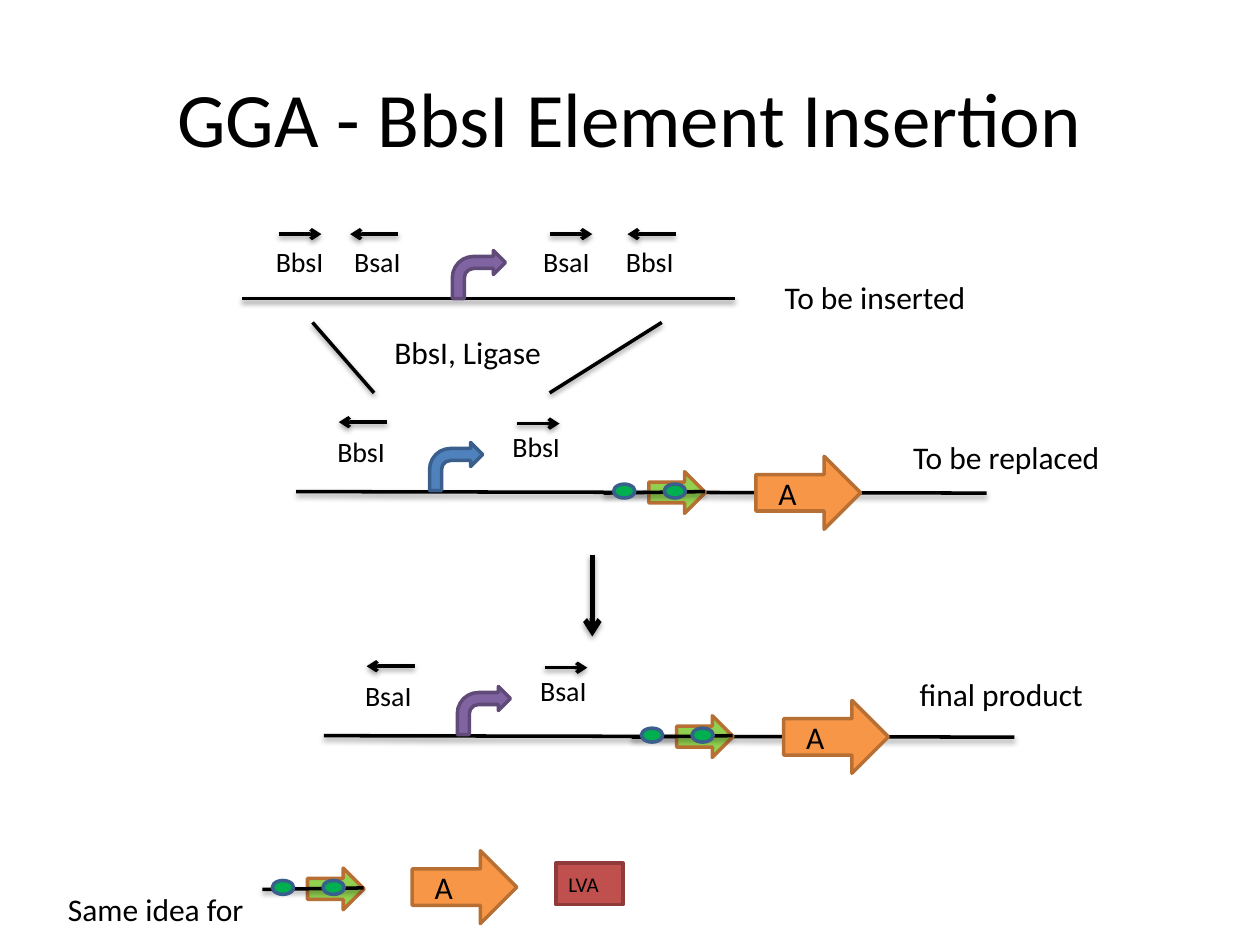
from lxml import etree
from pptx import Presentation
from pptx.dml.color import RGBColor
from pptx.enum.shapes import MSO_CONNECTOR, MSO_SHAPE
from pptx.enum.text import MSO_ANCHOR, PP_ALIGN
from pptx.oxml.ns import qn
from pptx.util import Cm, Pt

STRAIGHT = MSO_CONNECTOR.STRAIGHT
RIGHT_ARROW, BENT_ARROW = MSO_SHAPE.RIGHT_ARROW, MSO_SHAPE.BENT_ARROW
OVAL, RECTANGLE = MSO_SHAPE.OVAL, MSO_SHAPE.RECTANGLE
LEFT, CENTER = PP_ALIGN.LEFT, PP_ALIGN.CENTER
TOP, MIDDLE = MSO_ANCHOR.TOP, MSO_ANCHOR.MIDDLE

BLACK = "000000"
ORANGE, ORANGE_EDGE = "F79646", "B76F34"
PURPLE, PURPLE_EDGE = "8064A2", "5F4A78"
BLUE, BLUE_EDGE = "4F81BD", "3A5F8C"
RED, RED_EDGE = "C0504D", "8E3B39"
LIME, GREEN = "92D050", "00B050"


def colour(hex_string):
    """Turn a hex string into a colour."""
    return RGBColor.from_string(hex_string)


def write(frame, text, size=18, align=LEFT, anchor=TOP, ink=BLACK):
    """Put formatted text into a text frame."""
    frame.word_wrap = True
    frame.vertical_anchor = anchor
    paragraph = frame.paragraphs[0]
    paragraph.alignment = align
    run = paragraph.add_run()
    run.text = text
    run.font.name = "Calibri"
    run.font.size = Pt(size)
    run.font.color.rgb = colour(ink)


def add_label(slide, text, x, y, width, height=1.02, **style):
    """Place a text box."""
    label = slide.shapes.add_textbox(Cm(x), Cm(y), Cm(width), Cm(height))
    write(label.text_frame, text, **style)


def add_part(shapes, kind, x, y, width, height, fill, edge):
    """Place a filled and outlined preset shape."""
    part = shapes.add_shape(kind, Cm(x), Cm(y), Cm(width), Cm(height))
    part.shadow.inherit = False
    part.fill.solid()
    part.fill.fore_color.rgb = colour(fill)
    part.line.color.rgb = colour(edge)
    part.line.width = Pt(2)
    return part


def add_line(shapes, x1, y1, x2, y2, weight=2, arrow=False):
    """Draw a black line with a soft shadow and an optional arrowhead."""
    line = shapes.add_connector(STRAIGHT, Cm(x1), Cm(y1), Cm(x2), Cm(y2))
    line.line.color.rgb = colour(BLACK)
    line.line.width = Pt(weight)
    properties = line._element.spPr
    if arrow:
        etree.SubElement(properties.find(qn("a:ln")), qn("a:tailEnd"), type="arrow")
    effects = etree.SubElement(properties, qn("a:effectLst"))
    shadow = etree.SubElement(
        effects, qn("a:outerShdw"), blurRad=str(Pt(3.1)), dist=str(Pt(1.6)),
        dir="5400000", rotWithShape="0")
    shade = etree.SubElement(shadow, qn("a:srgbClr"), val=BLACK)
    etree.SubElement(shade, qn("a:alpha"), val="38000")


def add_site(slide, enzyme, x, y, label_x, label_y, forward):
    """Draw a restriction site: a direction arrow and the enzyme name."""
    reach = 0.86 if forward else -0.97
    add_line(slide.shapes, x, y, x + reach, y, arrow=True)
    add_label(slide, enzyme, label_x, label_y, 1.96, 1.7, size=16)


def add_promoter(slide, x, y, fill, edge):
    """Draw a promoter standing on the backbone."""
    add_part(slide.shapes, BENT_ARROW, x, y, 1.07, 0.97, fill, edge)


def add_gene(slide, x, y):
    """Draw the coding sequence A."""
    add_part(slide.shapes, RIGHT_ARROW, x, y, 2.11, 1.47, ORANGE, ORANGE_EDGE)
    add_label(slide, "A", x + 0.2, y + 0.23, 0.84)


def add_cassette(slide, x, y):
    """Draw the grouped arrow with its two recombination sites."""
    shapes = slide.shapes.add_group_shape().shapes
    add_part(shapes, RIGHT_ARROW, x + 0.91, y - 0.43, 1.14, 0.84, LIME, ORANGE_EDGE)
    add_line(shapes, x, y, x + 2.04, y - 0.03)
    for offset in (1.22, 0.2):
        add_part(shapes, OVAL, x + offset, y - 0.18, 0.43, 0.28, GREEN, BLUE_EDGE)


def add_insert(slide, x, y):
    """Draw the fragment to be inserted, with its backbone starting at x, y."""
    add_line(slide.shapes, x, y, x + 9.93, y)
    add_promoter(slide, x + 4.24, y - 0.97, PURPLE, PURPLE_EDGE)
    sites = (("BbsI", 0.74, 0.43, True), ("BsaI", 3.15, 2.01, False),
             ("BsaI", 6.2, 5.82, True), ("BbsI", 8.74, 7.49, False))
    for enzyme, start, label, forward in sites:
        add_site(slide, enzyme, x + start, y - 1.3, x + label, y - 1.22, forward)
    add_label(slide, "To be inserted", x + 10.69, y - 0.53, 5.03)


def add_construct(slide, x, y, enzyme, fill, edge):
    """Draw a whole construct, with its backbone starting at x, y."""
    add_line(slide.shapes, x, y, x + 13.92, y + 0.03)
    add_gene(slide, x + 9.27, y - 0.71)
    add_promoter(slide, x + 2.69, y - 0.99, fill, edge)
    add_cassette(slide, x + 6.2, y + 0.03)
    add_site(slide, enzyme, x + 1.83, y - 1.4, x + 0.58, y - 1.27, False)
    add_site(slide, enzyme, x + 4.45, y - 1.37, x + 4.11, y - 1.37, True)


def add_reaction(slide, x, y):
    """Draw the ligation step between insert and target."""
    add_line(slide.shapes, x, y, x + 1.24, y + 1.42)
    add_line(slide.shapes, x + 7.04, y, x + 4.78, y + 1.42)
    add_label(slide, "BbsI, Ligase", x + 1.4, y + 0.08, 3.58)


def add_other_elements(slide, x, y):
    """Draw the row of other exchangeable elements."""
    add_cassette(slide, x + 4.17, y + 0.13)
    add_gene(slide, x + 7.19, y - 0.65)
    tag = add_part(slide.shapes, RECTANGLE, x + 10.09, y - 0.4, 1.35, 0.84, RED, RED_EDGE)
    write(tag.text_frame, "LVA", size=12, anchor=MIDDLE)
    add_label(slide, "Same idea for", x, y + 0.01, 8.36)


def add_title(slide, text):
    """Place and fill the title."""
    title = slide.shapes.title
    title.left, title.top, title.width, title.height = map(Cm, (1.27, 0.76, 22.86, 3.18))
    write(title.text_frame, text, size=44, align=CENTER, anchor=MIDDLE)


def main():
    """Build the slide."""
    deck = Presentation()
    deck.slide_width, deck.slide_height = Cm(25.4), Cm(19.05)
    slide = deck.slides.add_slide(deck.slide_layouts[5])
    add_title(slide, "GGA - BbsI Element Insertion")
    add_insert(slide, 4.88, 6.02)
    add_reaction(slide, 6.3, 6.5)
    add_construct(slide, 5.97, 9.91, "BbsI", BLUE, BLUE_EDGE)
    add_label(slide, "To be replaced", 18.16, 8.71, 5.03)
    add_line(slide.shapes, 11.94, 11.18, 11.94, 12.83, weight=3, arrow=True)
    add_construct(slide, 6.53, 14.83, "BsaI", PURPLE, PURPLE_EDGE)
    add_label(slide, "final product", 18.29, 13.49, 5.03)
    add_other_elements(slide, 1.12, 17.8)
    deck.save("out.pptx")


if __name__ == "__main__":
    main()
